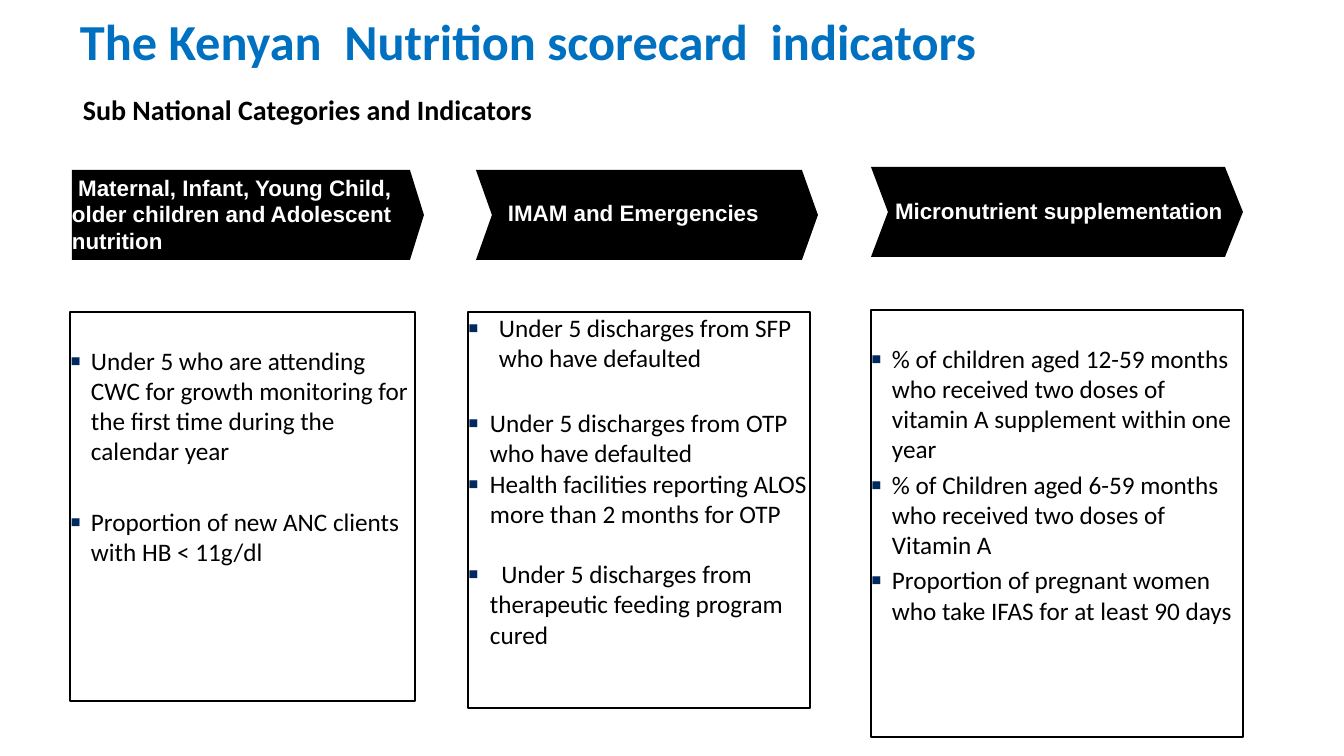
from pptx import Presentation
from pptx import util as u
from pptx.dml.color import RGBColor
from pptx.enum import shapes, text
from pptx.oxml import parse_xml
from pptx.oxml.ns import nsdecls

SCALE = 914400 / 100.8  # EMU in one px

THEME = {
    "title": {"name": "Calibri", "size": 36, "color": "0070C0", "bold": True},
    "subtitle": {"name": "Calibri", "size": 20, "color": "000000", "bold": True},
    "label": {"name": "Arial", "size": 16, "color": "FFFFFF", "bold": True},
    "item": {"name": "Calibri", "size": 18, "color": "000000", "bold": False},
    "arrow": "000000", "panel": "FFFFFF", "border": "000000", "bullet": "002960",
}

# style, text, box (left, top, width, height)
HEADINGS = [
    ("title", "The Kenyan  Nutrition scorecard  indicators", (70, 12, 1234, 65)),
    ("subtitle", "Sub National Categories and Indicators", (73, 91, 953, 41)),
]

# items: text, gap above, hanging indent
COLUMNS = [
    {
        "label": " Maternal, Infant, Young Child, older children and Adolescent nutrition",
        "arrow": (72, 170, 352, 90), "tip": 14, "notch": 0,
        "label_box": (72, 170, 350, 88),
        "panel": (70, 312, 345, 389), "panel_inset": 33,
        "items": [
            ("Under 5 who are attending CWC for growth monitoring for the first time "
             "during the calendar year", 0, 21),
            ("Proportion of new ANC clients with HB < 11g/dl", 40, 21),
        ],
    },
    {
        "label": "IMAM and Emergencies",
        "arrow": (476, 170, 342, 90), "tip": 16, "notch": 16,
        "label_box": (508, 199, 270, 27),
        "panel": (468, 312, 342, 396), "panel_inset": 0,
        "items": [
            ("Under 5 discharges from SFP who have defaulted", 0, 31),
            ("Under 5 discharges from OTP who have defaulted", 35, 22),
            ("Health facilities reporting ALOS more than 2 months for OTP", 0, 22),
            ("  Under 5 discharges from therapeutic feeding program cured", 30, 22),
        ],
    },
    {
        "label": "Micronutrient supplementation",
        "arrow": (871, 167, 372, 90), "tip": 18, "notch": 17,
        "label_box": (895, 197, 343, 27),
        "panel": (871, 310, 372, 427), "panel_inset": 33,
        "items": [
            ("% of children aged 12-59 months who received two doses of vitamin A "
             "supplement within one year", 0, 21),
            ("% of Children aged 6-59 months who received two doses of Vitamin A", 5, 21),
            ("Proportion of pregnant women who take IFAS for at least 90 days", 5, 21),
        ],
    },
]


def px(*lengths):
    return [u.Emu(round(length * SCALE)) for length in lengths]


def set_values(target, values):
    for name, value in values.items():
        setattr(target, name, value)


def paint(shape, fill, border=None):
    shape.shadow.inherit = False
    shape.fill.solid()
    shape.fill.fore_color.rgb = RGBColor.from_string(fill)
    if border:
        shape.line.color.rgb = RGBColor.from_string(border)
        shape.line.width = u.Pt(1)
    else:
        shape.line.fill.background()


def write(paragraph, words, style):
    run = paragraph.add_run()
    run.text = words
    look = THEME[style]
    set_values(run.font, {"name": look["name"], "size": u.Pt(look["size"]),
                          "bold": look["bold"]})
    run.font.color.rgb = RGBColor.from_string(look["color"])
    paragraph.alignment = text.PP_ALIGN.LEFT


def prepare_frame(frame, anchor, top=0):
    set_values(frame, {"word_wrap": True, "vertical_anchor": anchor,
                       "margin_left": 0, "margin_right": 0,
                       "margin_top": px(top)[0], "margin_bottom": 0})


def add_bullet(paragraph, indent):
    properties = paragraph._p.get_or_add_pPr()
    hanging = px(indent)[0]
    properties.set("marL", str(hanging))
    properties.set("indent", str(-hanging))
    for tag in (f'<a:buClr {nsdecls("a")}><a:srgbClr val="{THEME["bullet"]}"/></a:buClr>',
                f'<a:buSzPct {nsdecls("a")} val="125000"/>',
                f'<a:buFont {nsdecls("a")} typeface="Arial"/>',
                f'<a:buChar {nsdecls("a")} char="▪"/>'):
        properties.append(parse_xml(tag))


def add_heading(slide, style, words, box):
    frame = slide.shapes.add_textbox(*px(*box)).text_frame
    frame.word_wrap = True
    frame.paragraphs[0].line_spacing = 0.9
    write(frame.paragraphs[0], words, style)


def add_arrow(slide, column):
    left, top, width, height = column["arrow"]
    right, middle, bottom = left + width, top + height / 2, top + height
    shoulder = right - column["tip"]
    builder = slide.shapes.build_freeform(left, top, scale=SCALE)
    builder.add_line_segments([(shoulder, top), (right, middle), (shoulder, bottom),
                               (left, bottom), (left + column["notch"], middle)])
    paint(builder.convert_to_shape(), THEME["arrow"])
    frame = slide.shapes.add_textbox(*px(*column["label_box"])).text_frame
    prepare_frame(frame, text.MSO_ANCHOR.MIDDLE)
    write(frame.paragraphs[0], column["label"], "label")


def add_panel(slide, column):
    panel = slide.shapes.add_shape(shapes.MSO_SHAPE.RECTANGLE, *px(*column["panel"]))
    paint(panel, THEME["panel"], THEME["border"])
    frame = panel.text_frame
    prepare_frame(frame, text.MSO_ANCHOR.TOP, column["panel_inset"])
    for number, (words, gap, indent) in enumerate(column["items"]):
        paragraph = frame.add_paragraph() if number else frame.paragraphs[0]
        write(paragraph, words, "item")
        paragraph.space_before = px(gap)[0]
        add_bullet(paragraph, indent)


def main():
    presentation = Presentation()
    presentation.slide_width, presentation.slide_height = px(1344, 756)
    slide = presentation.slides.add_slide(presentation.slide_layouts[6])
    for heading in HEADINGS:
        add_heading(slide, *heading)
    for column in COLUMNS:
        add_arrow(slide, column)
        add_panel(slide, column)
    presentation.save("out.pptx")


if __name__ == "__main__":
    main()
